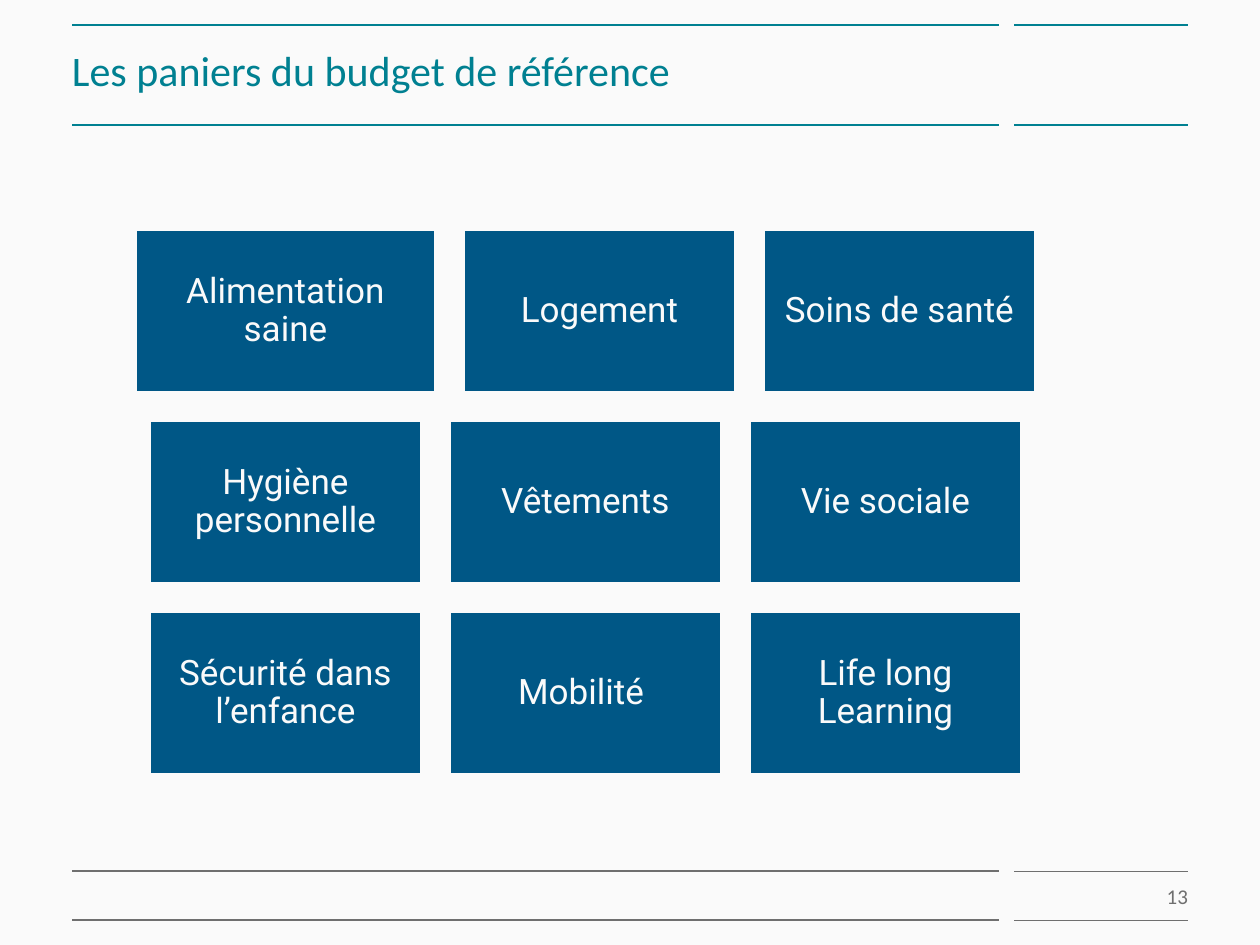
"""Build the slide showing the nine baskets of the reference budget."""
import pptx
import pptx.util
import pptx.dml.color
import pptx.enum.shapes
import pptx.enum.text
import lxml.etree
import pptx.oxml.ns

TEAL = pptx.dml.color.RGBColor(0x00, 0x80, 0x91)
GREY = pptx.dml.color.RGBColor(0x6F, 0x6F, 0x6F)
NAVY = pptx.dml.color.RGBColor(0x00, 0x57, 0x86)
PAPER = pptx.dml.color.RGBColor(0xFA, 0xFA, 0xFA)
ALIGN = pptx.enum.text.PP_ALIGN
ANCHOR = pptx.enum.text.MSO_ANCHOR


def px(length):
    return pptx.util.Emu(round(length * 914400 / 126))


def write(holder, text, font, size, color, align, anchor, insets):
    frame = holder.text_frame
    frame.word_wrap = True
    frame.vertical_anchor = anchor
    for side, inset in zip(("left", "top", "right", "bottom"), insets):
        setattr(frame, f"margin_{side}", px(inset))
    paragraph = frame.paragraphs[0]
    paragraph.alignment = align
    run = paragraph.add_run()
    run.text = text
    for key, value in {"name": font, "size": pptx.util.Pt(size)}.items():
        setattr(run.font, key, value)
    run.font.color.rgb = color
    return paragraph


deck = pptx.Presentation()
deck.slide_width, deck.slide_height = px(1260), px(945)
slide = deck.slides.add_slide(deck.slide_layouts[6])
slide.background.fill.solid()
slide.background.fill.fore_color.rgb = PAPER

for y, color, main_width, side_width in (
    (25, TEAL, 1.5, 0.75),
    (125, TEAL, 1.5, 0.75),
    (871, GREY, 0.75, 0.25),
    (920, GREY, 0.75, 0.25),
):
    for start, end, width in ((999, 72, main_width), (1188, 1014, side_width)):
        rule = slide.shapes.add_connector(
            pptx.enum.shapes.MSO_CONNECTOR.STRAIGHT, px(start), px(y), px(end), px(y))
        rule.line.color.rgb = color
        rule.line.width = pptx.util.Pt(width)
        lxml.etree.SubElement(rule._element.spPr, pptx.oxml.ns.qn("a:effectLst"))

title = slide.shapes.add_textbox(px(72), px(26), px(927), px(100))
write(title, "Les paniers du budget de référence", "Calibri", 24, TEAL,
      ALIGN.LEFT, ANCHOR.MIDDLE, (0, 0, 0, 13))
page_number = slide.shapes.add_textbox(px(1014), px(871), px(174), px(49))
write(page_number, "13", "Calibri", 12, GREY, ALIGN.RIGHT, ANCHOR.TOP, (0, 13, 0, 0))

BASKET_ROWS = (
    (("Alimentation saine", 301), ("Logement", 273), ("Soins de santé", 273)),
    (("Hygiène personnelle", 273), ("Vêtements", 273), ("Vie sociale", 273)),
    (("Sécurité dans l’enfance", 273), ("Mobilité ", 273), ("Life long Learning", 273)),
)
CENTER, TOP, HEIGHT, GAP = 585, 229, 164, 27

for row, baskets in enumerate(BASKET_ROWS):
    row_width = sum(width for _, width in baskets) + GAP * (len(baskets) - 1)
    left = CENTER - row_width // 2
    for label, width in baskets:
        basket = slide.shapes.add_shape(
            pptx.enum.shapes.MSO_SHAPE.RECTANGLE,
            px(left), px(TOP + row * (HEIGHT + GAP)), px(width), px(HEIGHT))
        basket.shadow.inherit = False
        basket.fill.solid()
        basket.fill.fore_color.rgb = NAVY
        basket.line.color.rgb = PAPER
        basket.line.width = pptx.util.Pt(2)
        paragraph = write(basket, label, "Roboto", 20, PAPER,
                          ALIGN.CENTER, ANCHOR.MIDDLE, (10, 10, 10, 10))
        paragraph.line_spacing = 0.9
        left += width + GAP

deck.save("out.pptx")
